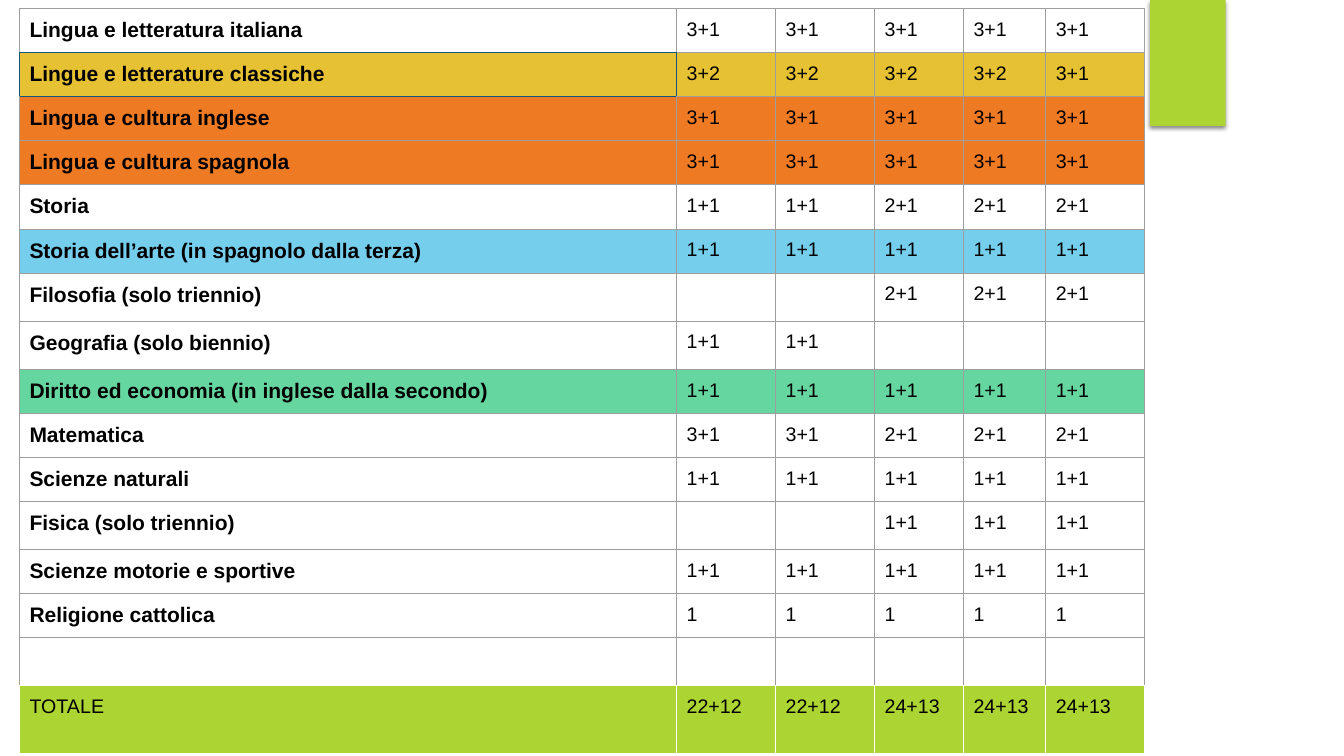
from lxml.etree import SubElement
from pptx import Presentation
from pptx.dml.color import RGBColor
from pptx.enum.shapes import MSO_SHAPE
from pptx.oxml import parse_xml
from pptx.oxml.ns import nsdecls, qn
from pptx.util import Pt

BLACK = RGBColor(0x00, 0x00, 0x00)
WHITE = RGBColor(0xFF, 0xFF, 0xFF)
GRAY = RGBColor(0x9E, 0x9E, 0x9E)
BLUE = RGBColor(0x0E, 0x55, 0x80)
LIME = RGBColor(0xAC, 0xD4, 0x33)
GOLD = RGBColor(0xE6, 0xC1, 0x33)
ORANGE = RGBColor(0xEF, 0x7A, 0x24)
SKY = RGBColor(0x75, 0xCE, 0xEC)
MINT = RGBColor(0x65, 0xD6, 0xA0)

# Subject, weekly hours for years one to five, row colour
SUBJECTS = [
    ("Lingua e letteratura italiana", ["3+1"] * 5, None),
    ("Lingue e letterature classiche", ["3+2"] * 4 + ["3+1"], GOLD),
    ("Lingua e cultura inglese", ["3+1"] * 5, ORANGE),
    ("Lingua e cultura spagnola", ["3+1"] * 5, ORANGE),
    ("Storia", ["1+1"] * 2 + ["2+1"] * 3, None),
    ("Storia dell’arte (in spagnolo dalla terza)", ["1+1"] * 5, SKY),
    ("Filosofia (solo triennio)", [""] * 2 + ["2+1"] * 3, None),
    ("Geografia (solo biennio)", ["1+1"] * 2 + [""] * 3, None),
    ("Diritto ed economia (in inglese dalla secondo)", ["1+1"] * 5, MINT),
    ("Matematica", ["3+1"] * 2 + ["2+1"] * 3, None),
    ("Scienze naturali", ["1+1"] * 5, None),
    ("Fisica (solo triennio)", [""] * 2 + ["1+1"] * 3, None),
    ("Scienze motorie e sportive", ["1+1"] * 5, None),
    ("Religione cattolica", ["1"] * 5, None),
    ("", [""] * 5, None),
    ("TOTALE", ["22+12"] * 2 + ["24+13"] * 3, LIME),
]
WIDTHS = [469.4, 70.7, 70.7, 63.5, 58.8, 70.7]
ROW, TALL, LAST = 31.5, 34.3, 48.2
LEFT, TOP, PAD = 13.9, 6.1, 7.2

TOTAL = len(SUBJECTS) - 1
CLASSIC = 1  # the row whose subject cell is framed in blue


def edges(row, col):
    """Border colours of a cell: left, right, top, bottom."""
    if row == TOTAL:
        return [WHITE] * 4
    sides = [GRAY] * 4
    if row == TOTAL - 1:
        sides[3] = WHITE
    if (row, col) == (CLASSIC, 0):
        sides = [BLUE] * 4
    elif (row, col) == (CLASSIC, 1):
        sides[0] = BLUE
    elif (row, col) == (CLASSIC - 1, 0):
        sides[3] = BLUE
    elif (row, col) == (CLASSIC + 1, 0):
        sides[2] = BLUE
    return sides


def frame(cell, sides):
    props = cell._tc.get_or_add_tcPr()
    for tag, color in zip(("a:lnL", "a:lnR", "a:lnT", "a:lnB"), sides):
        line = SubElement(props, qn(tag), w=str(Pt(0.75)))
        fill = SubElement(line, qn("a:solidFill"))
        SubElement(fill, qn("a:srgbClr"), val=str(color))


def write(cell, text, size, bold):
    cell.text_frame.text = text
    cell.margin_left = cell.margin_right = Pt(PAD)
    cell.margin_top = cell.margin_bottom = Pt(PAD)
    font = cell.text_frame.paragraphs[0].runs[0].font
    font.name, font.size, font.bold = "Arial", Pt(size), bold
    font.color.rgb = BLACK


def height(row):
    if row == TOTAL:
        return LAST
    return TALL if "" in SUBJECTS[row][1] else ROW


def add_tab(slide):
    tab = slide.shapes.add_shape(
        MSO_SHAPE.RECTANGLE, Pt(821.5), Pt(0), Pt(54), Pt(90))
    tab.fill.solid()
    tab.fill.fore_color.rgb = LIME
    tab.line.fill.background()
    tab._element.spPr.append(parse_xml(
        f'<a:effectLst {nsdecls("a")}>'
        f'<a:outerShdw blurRad="{Pt(3)}" dist="{Pt(2)}" dir="5400000" rotWithShape="0">'
        '<a:srgbClr val="000000"><a:alpha val="45000"/></a:srgbClr>'
        '</a:outerShdw></a:effectLst>'))


def add_hours(slide):
    heights = [height(row) for row in range(len(SUBJECTS))]
    table = slide.shapes.add_table(
        len(SUBJECTS), len(WIDTHS), Pt(LEFT), Pt(TOP),
        Pt(sum(WIDTHS)), Pt(sum(heights))).table
    table.first_row = table.horz_banding = False
    for column, width in zip(table.columns, WIDTHS):
        column.width = Pt(width)
    for row, (subject, hours, color) in enumerate(SUBJECTS):
        table.rows[row].height = Pt(heights[row])
        for col, text in enumerate([subject, *hours]):
            cell = table.cell(row, col)
            frame(cell, edges(row, col))
            if color:
                cell.fill.solid()
                cell.fill.fore_color.rgb = color
            else:
                cell.fill.background()
            if text:
                head = col == 0 and row != TOTAL
                write(cell, text, 15 if head else 14, head)


def main():
    deck = Presentation()
    deck.slide_width, deck.slide_height = Pt(960), Pt(540)
    slide = deck.slides.add_slide(deck.slide_layouts[6])
    add_tab(slide)
    add_hours(slide)
    deck.save("out.pptx")


if __name__ == "__main__":
    main()
